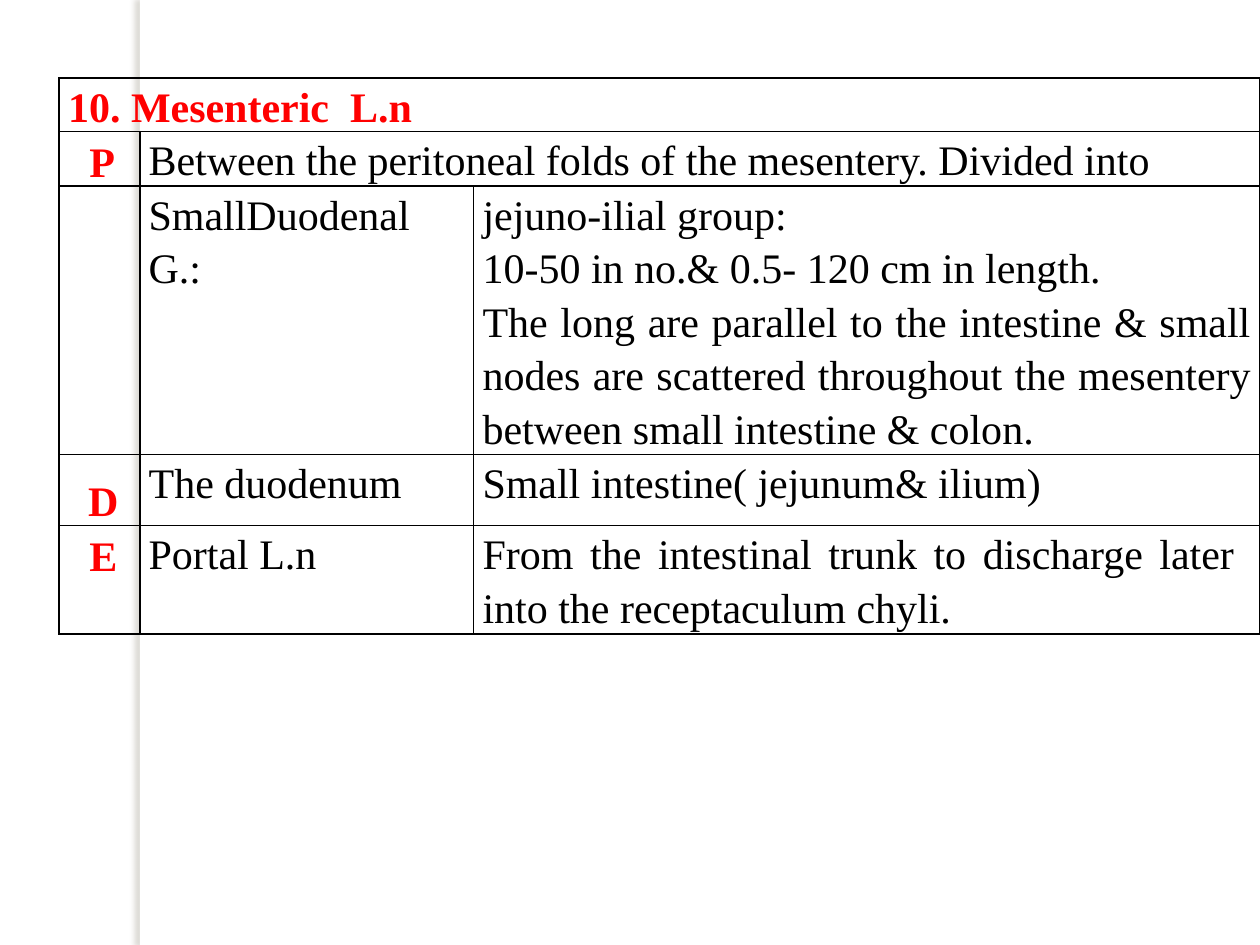
"""Build the mesenteric lymph node table slide."""
import pptx
import pptx.util
import pptx.dml.color
import pptx.enum.shapes
import pptx.enum.text
import pptx.oxml
import pptx.oxml.ns

INCH = pptx.util.Inches
RED, BLACK, WHITE, SHADE = "FF0000", "000000", "FFFFFF", "7E7763"
COLS = [0.64, 2.65, 6.24]
ROWS = [0.42, 0.43, 2.13, 0.56, 0.86]
CELLS = [
    ["10. Mesenteric  L.n", None, None],
    ["P", "Between the peritoneal folds of the mesentery. Divided into", None],
    ["", "SmallDuodenal G.:",
     "jejuno-ilial group:\n10-50 in no.& 0.5- 120 cm in length.\n"
     "The long are parallel to the intestine & small nodes are scattered "
     "throughout the mesentery between small intestine & colon."],
    ["D", "The duodenum", "Small intestine( jejunum& ilium)"],
    ["E", "Portal L.n",
     "From the intestinal trunk to discharge later  into the receptaculum chyli."],
]
INDENTS = {"P": 0.17, "D": 0.2, "E": 0.17}


def color(code):
    """Turn a hex string into a colour."""
    return pptx.dml.color.RGBColor.from_string(code)


def parse_xml(text):
    """Make an element in the drawing namespace."""
    space = pptx.oxml.ns.nsdecls("a")
    return pptx.oxml.parse_xml(text.replace(" ", f" {space} ", 1))


def add_strip(slide):
    """Add the white strip that casts a shadow to its left."""
    kind = pptx.enum.shapes.MSO_SHAPE.RECTANGLE
    strip = slide.shapes.add_shape(kind, INCH(1.11), 0, INCH(0.08), INCH(7.5))
    strip.fill.solid()
    strip.fill.fore_color.rgb = color(WHITE)
    strip.line.fill.background()
    strip.shadow.inherit = False
    size = pptx.util.Pt(3)
    effects = strip.element.spPr.find(pptx.oxml.ns.qn("a:effectLst"))
    effects.append(parse_xml(
        f'<a:outerShdw blurRad="{size}" dist="{size}" dir="10800000">'
        f'<a:srgbClr val="{SHADE}"><a:alpha val="25000"/></a:srgbClr>'
        '</a:outerShdw>'))


def style_cell(cell):
    """Clear the fill, set the margins and draw the four borders."""
    cell.fill.background()
    cell.margin_left = cell.margin_right = INCH(0.07)
    cell.margin_top = cell.margin_bottom = 0
    props = cell._tc.get_or_add_tcPr()
    for place, side in enumerate("LRTB"):
        props.insert(place, parse_xml(
            f'<a:ln{side} w="{pptx.util.Pt(1)}"><a:solidFill>'
            f'<a:srgbClr val="{BLACK}"/></a:solidFill></a:ln{side}>'))


def write_cell(cell, text, label):
    """Write justified text, red and bold for a label."""
    cell.text = text
    for para in cell.text_frame.paragraphs:
        para.alignment = pptx.enum.text.PP_ALIGN.JUSTIFY
        para.line_spacing = 1.5 if text == "D" else 1.15
        para.font.name = "Times New Roman"
        para.font.size = pptx.util.Pt(24)
        para.font.bold = label
        para.font.color.rgb = color(RED if label else BLACK)
        if text in INDENTS:
            props = para._p.get_or_add_pPr()
            props.set("marL", str(INCH(INDENTS[text])))
            props.set("indent", "0")
    if text == "D":
        cell.margin_left = cell.margin_right = INCH(0.03)
    if text in INDENTS:
        cell.margin_top = INCH(0.01)


def add_grid(slide):
    """Add the table, merging each cell with the empty ones after it."""
    frame = slide.shapes.add_table(
        len(ROWS), len(COLS), INCH(0.47), INCH(0.62),
        INCH(sum(COLS)), INCH(sum(ROWS)))
    table = frame.table
    table.first_row = table.horz_banding = False
    for col, width in zip(table.columns, COLS):
        col.width = INCH(width)
    for row, height in zip(table.rows, ROWS):
        row.height = INCH(height)
    for y, texts in enumerate(CELLS):
        for x, text in enumerate(texts):
            cell = table.cell(y, x)
            style_cell(cell)
            if text is not None:
                write_cell(cell, text, x == 0)
        if None in texts:
            start = texts.index(None) - 1
            table.cell(y, start).merge(table.cell(y, len(COLS) - 1))


def main():
    """Build and save the slide."""
    deck = pptx.Presentation()
    deck.slide_width, deck.slide_height = INCH(10), INCH(7.5)
    slide = deck.slides.add_slide(deck.slide_layouts[6])
    add_strip(slide)
    add_grid(slide)
    deck.save("out.pptx")


if __name__ == "__main__":
    main()
